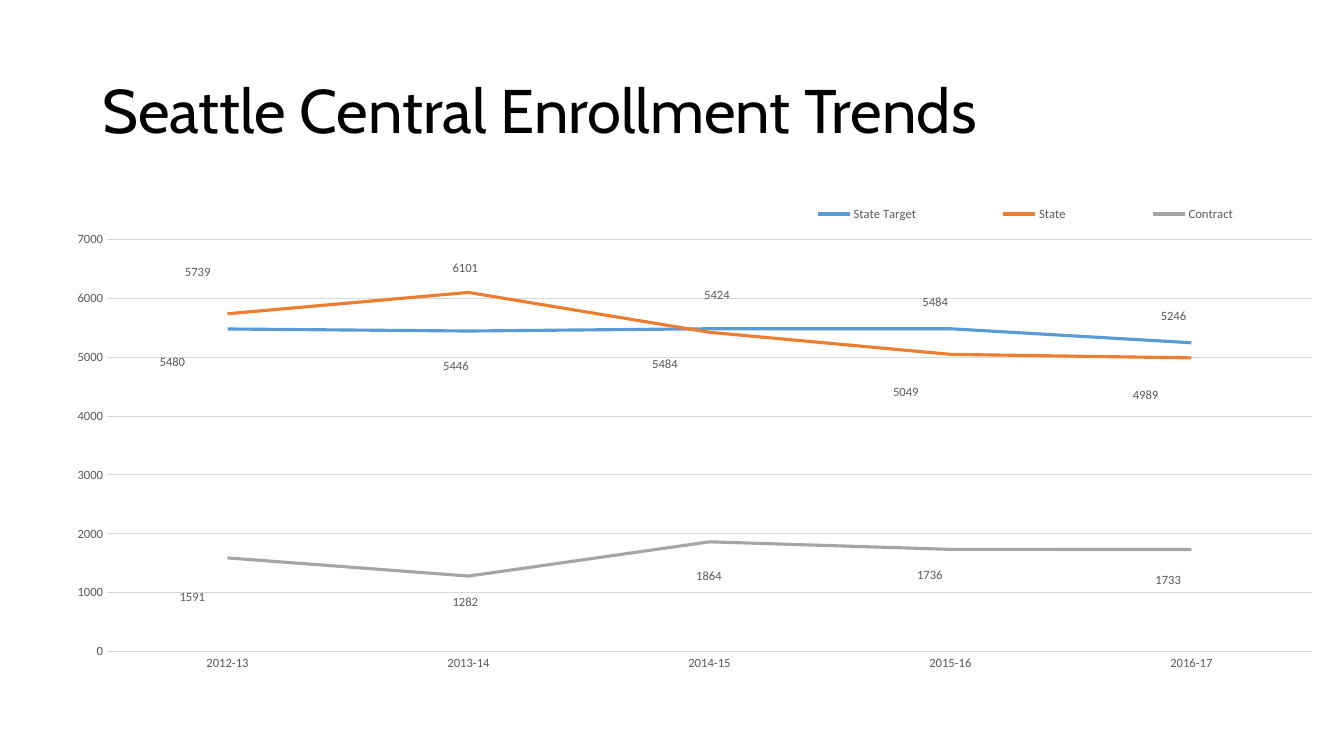
import pptx
import pptx.chart.data
import pptx.dml.color
import pptx.enum.chart
import pptx.enum.text
import pptx.oxml
import pptx.oxml.ns
import pptx.util
from pptx.util import Cm

HUES = {"ink": "000000", "text": "595959", "grid": "D9D9D9",
        "State Target": "5B9BD5", "State": "ED7D31", "Contract": "A5A5A5"}
YEARS = ["2012-13", "2013-14", "2014-15", "2015-16", "2016-17"]
COUNTS = {
    "State Target": [5480, 5446, 5484, 5484, 5246],
    "State": [5739, 6101, 5424, 5049, 4989],
    "Contract": [1591, 1282, 1864, 1736, 1733],
}
# Label shifts from each point, in percent of the chart's width and height
SHIFTS = {
    "State Target": [(-5.4, 5.6), (-2.2, 6), (-4.6, 6), (-2.4, -4.4), (-2.6, -4.4)],
    "State": [(-3.5, -7), (-1.5, -4.1), (-0.7, -6.2), (-4.6, 6.4), (-4.7, 6.3)],
    "Contract": [(-3.9, 6.7), (-1.5, 4.5), (-1.3, 5.8), (-2.8, 4.4), (-3, 5.2)],
}


def rgb(name):
    return pptx.dml.color.RGBColor.from_string(HUES[name])


def style(font, size, hue, face="Calibri"):
    font.size = pptx.util.Pt(size)
    font.name = face
    font.color.rgb = rgb(hue)


def rule(line, hue, width):
    line.color.rgb = rgb(hue)
    line.width = pptx.util.Pt(width)


def place(node, index, x, y, **parts):
    """Give a chart node a manual layout, with lengths in percent."""
    for old in node.findall(pptx.oxml.ns.qn("c:layout")):
        node.remove(old)
    sizes = {"x": x, "y": y}
    if "w" in parts:
        sizes.update(w=parts.pop("w"), h=parts.pop("h"))
        parts.update(xMode="edge", yMode="edge")
    parts.update({key: round(val / 100, 4) for key, val in sizes.items()})
    rows = "".join(f'<c:{key} val="{val}"/>' for key, val in parts.items())
    node.insert(index, pptx.oxml.parse_xml(
        f'<c:layout {pptx.oxml.ns.nsdecls("c")}>'
        f"<c:manualLayout>{rows}</c:manualLayout></c:layout>"))


def add_title(slide, box):
    text = slide.shapes.add_textbox(*box).text_frame
    text.word_wrap = True
    text.vertical_anchor = pptx.enum.text.MSO_ANCHOR.MIDDLE
    para = text.paragraphs[0]
    para.line_spacing = 0.9
    run = para.add_run()
    run.text = "Seattle Central Enrollment Trends"
    style(run.font, 44, "ink", "Cabin")


def set_axes(chart):
    none = pptx.enum.chart.XL_TICK_MARK.NONE
    years, count = chart.category_axis, chart.value_axis
    for axis in (years, count):
        axis.major_tick_mark = axis.minor_tick_mark = none
        style(axis.tick_labels.font, 9, "text")
    rule(years.format.line, "grid", 0.75)
    count.format.line.fill.background()
    count.minimum_scale, count.maximum_scale = 0, 7000
    count.major_unit = 1000
    count.has_major_gridlines = True
    rule(count.major_gridlines.format.line, "grid", 0.75)


def set_line(line):
    line.smooth = False
    line.marker.style = pptx.enum.chart.XL_MARKER_STYLE.NONE
    rule(line.format.line, line.name, 2.25)
    line.data_labels.show_value = True
    style(line.data_labels.font, 9, "text")
    for i in range(len(YEARS)):
        label = line.points[i].data_label
        style(label.font, 9, "text")
        label.position = pptx.enum.chart.XL_LABEL_POSITION.RIGHT
    nodes = line._element.findall(".//" + pptx.oxml.ns.qn("c:dLbl"))
    for node, (x, y) in zip(nodes, SHIFTS[line.name]):
        place(node, 1, x, y)
    for lead in line._element.findall(".//" + pptx.oxml.ns.qn("c:showLeaderLines")):
        lead.set("val", "0")


def add_trend(slide, box):
    data = pptx.chart.data.CategoryChartData(number_format="General")
    data.categories = YEARS
    for name, values in COUNTS.items():
        data.add_series(name, values)
    kind = pptx.enum.chart.XL_CHART_TYPE.LINE
    chart = slide.shapes.add_chart(kind, *box, data).chart
    chart.has_title = False
    style(chart.font, 10, "ink")
    set_axes(chart)
    chart.plots[0].vary_by_categories = False
    for line in chart.plots[0].series:
        set_line(line)
    chart.has_legend = True
    legend = chart.legend
    legend.position = pptx.enum.chart.XL_LEGEND_POSITION.BOTTOM
    legend.include_in_layout = False
    style(legend.font, 9, "text")
    place(legend._element, 1, 54.3, 5.6, w=43.6, h=6)
    area = chart._chartSpace.chart.plotArea
    place(area, 0, 7.2, 12.9, w=90.4, h=69.5, layoutTarget="inner")


def main():
    deck = pptx.Presentation()
    deck.slide_width, deck.slide_height = Cm(33.87), Cm(19.05)
    slide = deck.slides.add_slide(deck.slide_layouts[6])
    add_title(slide, (Cm(2.33), Cm(1.01), Cm(29.21), Cm(3.68)))
    add_trend(slide, (Cm(0.28), Cm(4.11), Cm(33.59), Cm(14.94)))
    deck.save("out.pptx")


if __name__ == "__main__":
    main()
